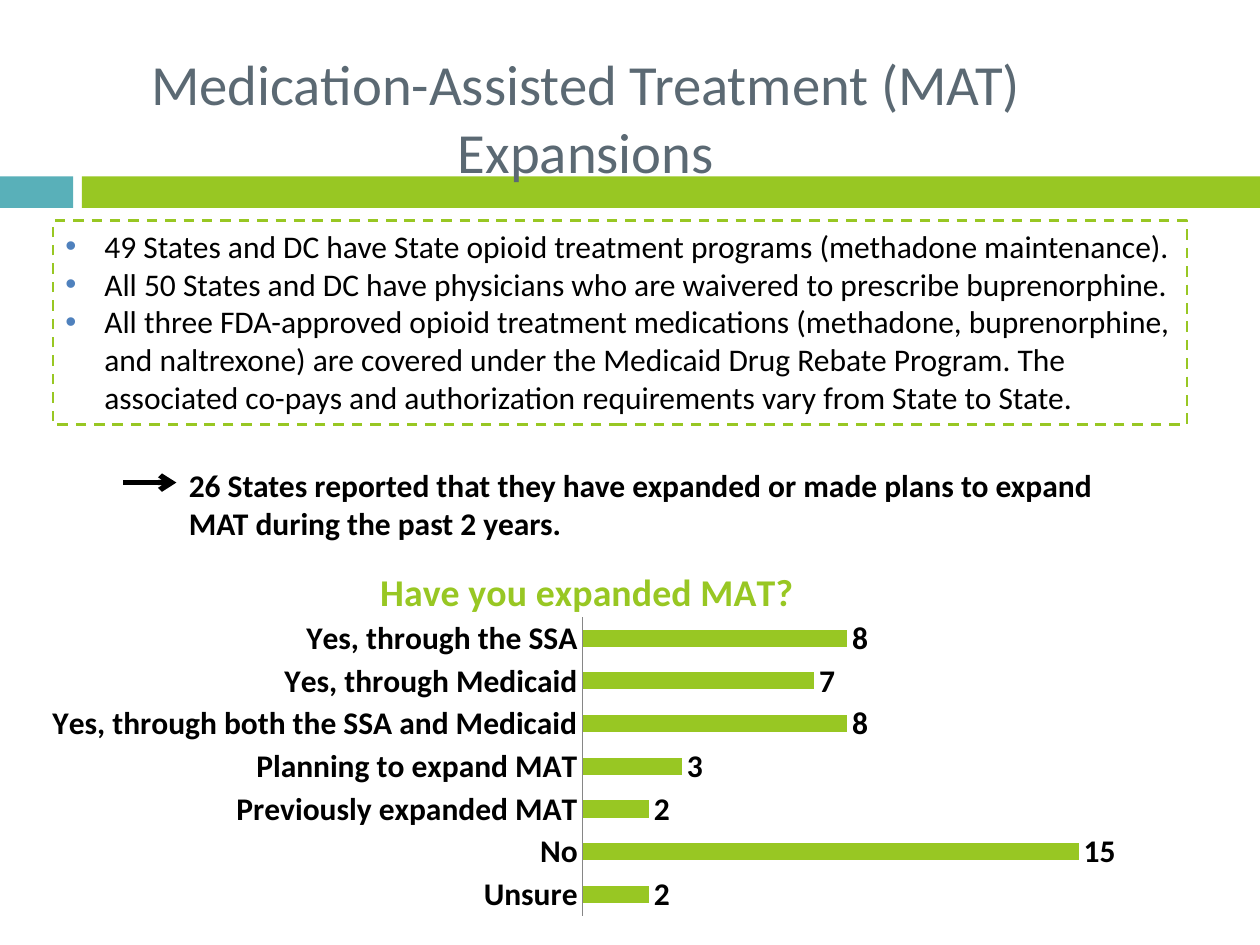
import pptx
import pptx.chart.data
import pptx.dml.color
import pptx.enum.chart
import pptx.enum.dml
import pptx.enum.shapes
import pptx.enum.text
import pptx.oxml
import pptx.oxml.ns
import pptx.util
from pptx.util import Inches, Pt

FONT = "Calibri"
GREEN, TEAL, SLATE, BLUE, BLACK = "98C723", "59B0B9", "5B6973", "4F81BD", "000000"

TITLE = "Medication-Assisted Treatment (MAT)\vExpansions"
FACTS = [
    "49 States and DC have State opioid treatment programs (methadone maintenance).",
    "All 50 States and DC have physicians who are waivered to prescribe buprenorphine.",
    "All three FDA-approved opioid treatment medications (methadone, buprenorphine, "
    "and naltrexone) are covered under the Medicaid Drug Rebate Program. The "
    "associated co-pays and authorization requirements vary from State to State.",
]
FINDING = ("26 States reported that they have expanded or made plans to expand "
           "MAT during the past 2 years.")
CHART_TITLE = "Have you expanded MAT?"
ANSWERS = [  # bottom bar first
    ("Unsure", 2),
    ("No", 15),
    ("Previously expanded MAT", 2),
    ("Planning to expand MAT", 3),
    ("Yes, through both the SSA and Medicaid", 8),
    ("Yes, through Medicaid", 7),
    ("Yes, through the SSA", 8),
]
BANDS = [(0, 0.58, TEAL), (0.65, 9.35, GREEN)]  # left, width, colour


def rgb(color):
    return pptx.dml.color.RGBColor.from_string(color)


def inches(*values):
    return [Inches(value) for value in values]


def style(font, size=18, color=BLACK, bold=False):
    font.name, font.size, font.bold = FONT, Pt(size), bold
    font.color.rgb = rgb(color)


def add_bullet(paragraph, color, indent=0.31):
    properties = paragraph._p.get_or_add_pPr()
    properties.set("marL", str(Inches(indent)))
    properties.set("indent", str(-Inches(indent)))
    namespace = pptx.oxml.ns.nsdecls("a")
    for xml in (f'<a:buClr {namespace}><a:srgbClr val="{color}"/></a:buClr>',
                f'<a:buFont {namespace} typeface="Arial"/>',
                f'<a:buChar {namespace} char="•"/>'):
        properties.append(pptx.oxml.parse_xml(xml))


def write(shape, texts, align="LEFT", anchor="TOP", bullet=None, **font):
    frame = shape.text_frame
    frame.word_wrap = True
    frame.vertical_anchor = getattr(pptx.enum.text.MSO_ANCHOR, anchor)
    for index, text in enumerate(texts):
        paragraph = frame.add_paragraph() if index else frame.paragraphs[0]
        paragraph.text = text
        paragraph.alignment = getattr(pptx.enum.text.PP_ALIGN, align)
        for run in paragraph.runs:
            style(run.font, **font)
        if bullet:
            add_bullet(paragraph, bullet)


def add_rectangle(slide, box, fill=None):
    shape = slide.shapes.add_shape(pptx.enum.shapes.MSO_SHAPE.RECTANGLE, *inches(*box))
    shape.shadow.inherit = False
    if fill:
        shape.fill.solid()
        shape.fill.fore_color.rgb = rgb(fill)
        shape.line.fill.background()
    else:
        shape.fill.background()
    return shape


def add_arrow(slide, start, end):
    arrow = slide.shapes.add_connector(
        pptx.enum.shapes.MSO_CONNECTOR.STRAIGHT, *inches(*start, *end))
    arrow.line.color.rgb = rgb(BLACK)
    arrow.line.width = Pt(3)
    namespace = pptx.oxml.ns.nsdecls("a")
    arrow.line._get_or_add_ln().append(
        pptx.oxml.parse_xml(f'<a:tailEnd {namespace} type="arrow"/>'))
    arrow._element.spPr.append(pptx.oxml.parse_xml(f"<a:effectLst {namespace}/>"))


def set_layout(element, successors, inner=False, **fractions):
    """Fix the place of a chart part, in fractions of the chart's size."""
    target = '<c:layoutTarget val="inner"/>' if inner else ""
    modes = "".join(f'<c:{key}Mode val="edge"/>' for key in "xy")
    values = "".join(f'<c:{key} val="{value}"/>' for key, value in fractions.items())
    for old in element.findall(pptx.oxml.ns.qn("c:layout")):
        element.remove(old)
    layout = pptx.oxml.parse_xml(
        f'<c:layout {pptx.oxml.ns.nsdecls("c")}><c:manualLayout>'
        f"{target}{modes}{values}</c:manualLayout></c:layout>")
    element.insert_element_before(layout, *successors)


def add_answer_chart(slide, box):
    data = pptx.chart.data.CategoryChartData()
    data.categories = [answer for answer, _ in ANSWERS]
    data.add_series("Series 1", [count for _, count in ANSWERS])
    chart = slide.shapes.add_chart(
        pptx.enum.chart.XL_CHART_TYPE.BAR_CLUSTERED, *inches(*box), data).chart
    style(chart.font)
    chart.has_legend = False

    chart.has_title = True
    paragraph = chart.chart_title.text_frame.paragraphs[0]
    paragraph.text = CHART_TITLE
    style(paragraph.runs[0].font, size=21.6, color=GREEN, bold=True)
    set_layout(chart.chart_title._element, ["c:overlay"], x=0.31, y=0.06)

    plot = chart.plots[0]
    plot.vary_by_categories = False
    plot.gap_width, plot.overlap = 150, -25
    fill = plot.series[0].format.fill
    fill.solid()
    fill.fore_color.rgb = rgb(GREEN)
    plot.has_data_labels = True
    plot.data_labels.show_value = True
    plot.data_labels.position = pptx.enum.chart.XL_LABEL_POSITION.OUTSIDE_END
    style(plot.data_labels.font, bold=True)
    set_layout(chart._chartSpace.chart.plotArea, ["c:barChart"], inner=True,
               x=0.5, y=0.21, w=0.48, h=0.77)

    categories, values = chart.category_axis, chart.value_axis
    categories.major_tick_mark = pptx.enum.chart.XL_TICK_MARK.NONE
    categories.format.line.color.rgb = rgb("868686")
    style(categories.tick_labels.font, bold=True)
    values.has_major_gridlines = False
    values.minimum_scale, values.maximum_scale = 0, 16
    values.visible = False


def main():
    presentation = pptx.Presentation()
    presentation.slide_width, presentation.slide_height = inches(10, 7.5)
    slide = presentation.slides.add_slide(presentation.slide_layouts[6])

    for left, width, color in BANDS:
        add_rectangle(slide, (left, 1.4, width, 0.25), fill=color)
    title = slide.shapes.add_textbox(*inches(0.05, 0.3, 9.2, 1.25))
    write(title, [TITLE], align="CENTER", anchor="MIDDLE", size=32.4, color=SLATE)

    add_answer_chart(slide, (0.25, 4.25, 8.75, 3.08))
    finding = slide.shapes.add_textbox(*inches(1.4, 3.65, 7.73, 0.71))
    write(finding, [FINDING], bold=True)
    add_arrow(slide, (0.98, 3.83), (1.4, 3.83))

    facts = add_rectangle(slide, (0.42, 1.75, 9, 1.62))
    facts.line.color.rgb = rgb(GREEN)
    facts.line.width = Pt(1.5)
    facts.line.dash_style = pptx.enum.dml.MSO_LINE.DASH
    write(facts, FACTS, bullet=BLUE)

    presentation.save("out.pptx")


if __name__ == "__main__":
    main()
